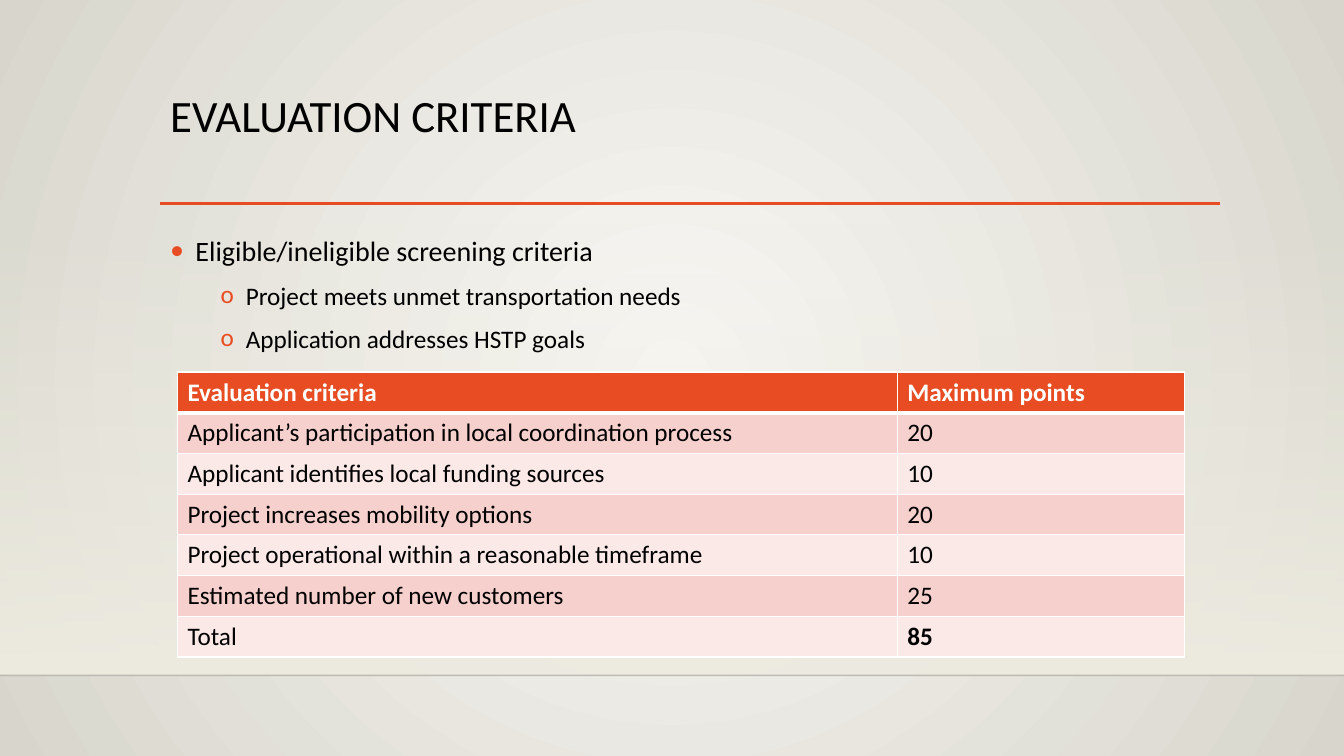
from lxml import etree
from pptx import Presentation
from pptx.dml.color import RGBColor
from pptx.enum import shapes, text
from pptx.oxml import parse_xml
from pptx.oxml.ns import nsdecls, qn
from pptx.util import Inches, Pt

COLORS = {"accent": "E84C22", "black": "000000", "white": "FFFFFF", "glow": "F9F8F5",
          "edge": "D8D6CC", "floor": "EEECE1", "horizon": "000001",
          "dark_band": "F6D0CD", "light_band": "FBE9E8"}
FONT = "Calibri"
TITLE = "EVALUATION CRITERIA"
BULLETS = [(0, "Eligible/ineligible screening criteria"),
           (1, "Project meets unmet transportation needs"),
           (1, "Application addresses HSTP goals")]
LEVELS = [{"mark": "•", "size": 20, "left": 0.25, "before": 10},
          {"mark": "o", "size": 18, "left": 0.75, "before": 5}]
CRITERIA = [("Evaluation criteria", "Maximum points"),
            ("Applicant’s participation in local coordination process", "20"),
            ("Applicant identifies local funding sources", "10"),
            ("Project increases mobility options", "20"),
            ("Project operational within a reasonable timeframe", "10"),
            ("Estimated number of new customers", "25"),
            ("Total", "85")]
COLUMN_WIDTHS = (7.14, 2.85)
TABLE_HEIGHT = 2.83
WIDTH, HEIGHT = 13.33, 7.5
HORIZON = 6.7


def color(name):
    return RGBColor.from_string(COLORS[name])


def gradient(start, end, direction, start_alpha=100):
    return parse_xml(
        f'<a:gradFill {nsdecls("a")} rotWithShape="1"><a:gsLst>'
        f'<a:gs pos="0"><a:srgbClr val="{COLORS[start]}">'
        f'<a:alpha val="{start_alpha * 1000}"/></a:srgbClr></a:gs>'
        f'<a:gs pos="100000"><a:srgbClr val="{COLORS[end]}"/></a:gs>'
        f'</a:gsLst>{direction}</a:gradFill>')


def replace_gradient(fill, parent, new_fill):
    fill.gradient()
    parent.replace(parent.find(qn("a:gradFill")), new_fill)


def add_run(paragraph, words, size, shade="black", bold=False):
    run = paragraph.add_run()
    run.text = words
    run.font.name = FONT
    run.font.size = Pt(size)
    run.font.bold = bold
    run.font.color.rgb = color(shade)


def add_line(slide, left, right, y, shade, weight, alpha=100):
    line = slide.shapes.add_connector(shapes.MSO_CONNECTOR.STRAIGHT, Inches(left),
                                      Inches(y), Inches(right), Inches(y))
    line.line.color.rgb = color(shade)
    line.line.width = Pt(weight)
    properties = line._element.spPr
    etree.SubElement(properties, qn("a:effectLst"))
    if alpha < 100:
        shade_element = next(properties.iter(qn("a:srgbClr")))
        etree.SubElement(shade_element, qn("a:alpha")).set("val", str(alpha * 1000))


def add_text_frame(slide, top, height):
    frame = slide.shapes.add_textbox(Inches(1.59), Inches(top), Inches(10.5),
                                     Inches(height)).text_frame
    frame.word_wrap = True
    frame.vertical_anchor = text.MSO_ANCHOR.TOP
    return frame


def add_background(slide):
    fill = slide.background.fill
    fill.solid()
    center = ('<a:path path="circle"><a:fillToRect l="50000" t="50000" '
              'r="50000" b="50000"/></a:path>')
    properties = next(slide._element.iter(qn("p:bgPr")))
    replace_gradient(fill, properties, gradient("glow", "edge", center))
    floor = slide.shapes.add_shape(shapes.MSO_SHAPE.RECTANGLE, 0, Inches(2.21),
                                   Inches(WIDTH), Inches(HORIZON - 2.21))
    floor.shadow.inherit = False
    floor.line.fill.background()
    replace_gradient(floor.fill, floor._element.spPr,
                     gradient("floor", "floor", '<a:lin ang="5400000" scaled="0"/>', 0))
    add_line(slide, 0, WIDTH, HORIZON, "horizon", 1, 20)


def add_bullets(slide):
    frame = add_text_frame(slide, 2.2, 4.64)
    for index, (depth, words) in enumerate(BULLETS):
        level = LEVELS[depth]
        paragraph = frame.add_paragraph() if index else frame.paragraphs[0]
        paragraph.level = depth
        paragraph.line_spacing = 1.2
        paragraph.space_before = Pt(level["before"] if index else 0)
        properties = paragraph._p.get_or_add_pPr()
        properties.set("marL", str(Inches(level["left"])))
        properties.set("indent", str(Inches(-0.25)))
        for markup in (f'<a:buClr {nsdecls("a")}><a:srgbClr val="{COLORS["accent"]}"/></a:buClr>',
                       f'<a:buFont {nsdecls("a")} typeface="{FONT}"/>',
                       f'<a:buChar {nsdecls("a")} char="{level["mark"]}"/>'):
            properties.append(parse_xml(markup))
        add_run(paragraph, words, level["size"])


def set_borders(cell, is_header, follows_header):
    properties = cell._tc.get_or_add_tcPr()
    weights = {"L": 1, "R": 1, "T": 3 if follows_header else 1, "B": 3 if is_header else 1}
    for position, (side, weight) in enumerate(weights.items()):
        properties.insert(position, parse_xml(
            f'<a:ln{side} {nsdecls("a")} w="{Pt(weight)}"><a:solidFill>'
            f'<a:srgbClr val="{COLORS["white"]}"/></a:solidFill></a:ln{side}>'))


def add_criteria_table(slide):
    table = slide.shapes.add_table(len(CRITERIA), len(COLUMN_WIDTHS), Inches(1.76),
                                   Inches(3.69), Inches(sum(COLUMN_WIDTHS)),
                                   Inches(TABLE_HEIGHT)).table
    for column, width in zip(table.columns, COLUMN_WIDTHS):
        column.width = Inches(width)
    for row, values in enumerate(CRITERIA):
        is_header = row == 0
        band = "accent" if is_header else ("light_band", "dark_band")[row % 2]
        for column, words in enumerate(values):
            cell = table.cell(row, column)
            cell.fill.solid()
            cell.fill.fore_color.rgb = color(band)
            set_borders(cell, is_header, row == 1)
            is_total = row == len(CRITERIA) - 1 and column == 1
            add_run(cell.text_frame.paragraphs[0], words, 18,
                    "white" if is_header else "black", is_header or is_total)


def main():
    """Build the evaluation criteria slide."""
    presentation = Presentation()
    presentation.slide_width = Inches(WIDTH)
    presentation.slide_height = Inches(HEIGHT)
    slide = presentation.slides.add_slide(presentation.slide_layouts[6])
    add_background(slide)
    add_line(slide, 1.59, 12.1, 2.02, "accent", 2.5)
    title = add_text_frame(slide, 0.88, 1.15).paragraphs[0]
    title.line_spacing = 0.9
    add_run(title, TITLE, 32)
    add_bullets(slide)
    add_criteria_table(slide)
    presentation.save("out.pptx")


if __name__ == "__main__":
    main()
